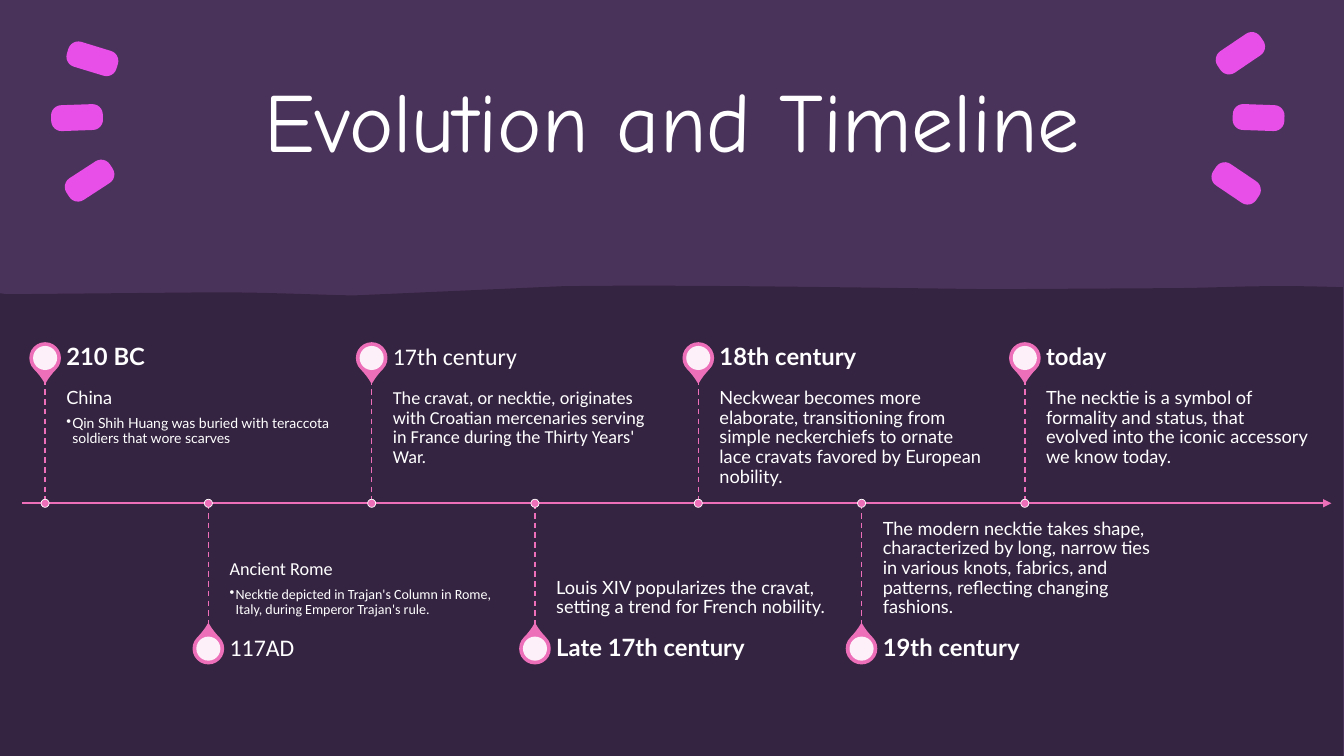
import lxml.etree
import pptx
import pptx.dml.color
import pptx.enum.dml
import pptx.enum.shapes
import pptx.enum.text
import pptx.oxml.ns
import pptx.util

Pt = pptx.util.Pt
qn = pptx.oxml.ns.qn
RGBColor = pptx.dml.color.RGBColor
SHAPE = pptx.enum.shapes.MSO_SHAPE
ANCHOR = pptx.enum.text.MSO_ANCHOR

PLUM = RGBColor(0x4A, 0x33, 0x5B)
NIGHT = RGBColor(0x35, 0x24, 0x41)
MAGENTA = RGBColor(0xE8, 0x4F, 0xE9)
PINK = RGBColor(0xED, 0x6F, 0xBA)
WHITE = RGBColor(0xFF, 0xFF, 0xFF)

SLIDE_W, SLIDE_H = 960, 540

# Dash centres within each burst's box, with their tilt in degrees
LEFT_DASHES = [(30, 19, 17), (19, 61, -2), (28, 106, -33)]
RIGHT_DASHES = [(20, 15, -34), (33, 61, 2), (17, 108, 34)]

# Wave edge from left to right: two numbers end a line, six end a curve
WAVE_START = (0, 209.5)
WAVE = [
    (5, 210.2), (153.4, 208.8),
    (194.4, 208.8, 234, 211, 254.2, 211), (401, 204.5),
    (479.5, 203, 639.4, 205.9, 710.6, 206.6), (830.2, 205.9),
    (871.2, 205.9, 897.8, 203, 959.3, 205.2),
]

# Date, date font, bold date, text, bullet
EVENTS = [
    ("210 BC", "Lato", True, "China",
     "Qin Shih Huang was buried with teraccota soldiers that wore scarves"),
    ("117AD", "Calibri", False, "Ancient Rome",
     "Necktie depicted in Trajan's Column in Rome, Italy, during Emperor Trajan's rule."),
    ("17th century", "Calibri", False,
     "The cravat, or necktie, originates with Croatian mercenaries serving in France "
     "during the Thirty Years' War.", None),
    ("Late 17th century", "Lato", True,
     "Louis XIV popularizes the cravat, setting a trend for French nobility.", None),
    ("18th century", "Lato", True,
     "Neckwear becomes more elaborate, transitioning from simple neckerchiefs to ornate "
     "lace cravats favored by European nobility.", None),
    ("19th century", "Lato", True,
     "The modern necktie takes shape, characterized by long, narrow ties in various knots, "
     "fabrics, and patterns, reflecting changing fashions.", None),
    ("today", "Lato", True,
     "The necktie is a symbol of formality and status, that evolved into the iconic "
     "accessory we know today.", None),
]
EVENT_STEP = 116.64
DATE_H, TEXT_H, TEXT_W = 31, 88.3, 194.4
PIN, HOLE, DOT = 21.6, 17.2, 5.8


def paint(shape, fill, outline=None, width=1):
    shape.shadow.inherit = False
    shape.fill.solid()
    shape.fill.fore_color.rgb = fill
    if outline is None:
        shape.line.fill.background()
    else:
        shape.line.color.rgb = outline
        shape.line.width = Pt(width)


def add_centred(slide, kind, x, y, width, height):
    return slide.shapes.add_shape(
        kind, Pt(x - width / 2), Pt(y - height / 2), Pt(width), Pt(height))


def add_line(slide, x1, y1, x2, y2, width):
    line = slide.shapes.add_connector(
        pptx.enum.shapes.MSO_CONNECTOR.STRAIGHT, Pt(x1), Pt(y1), Pt(x2), Pt(y2))
    line.line.color.rgb = PINK
    line.line.width = Pt(width)
    lxml.etree.SubElement(line._element.spPr, qn("a:effectLst"))
    return line


def format_paragraph(paragraph, text, font, size, bold=False):
    paragraph.text = text
    paragraph.line_spacing = 0.9
    paragraph.font.name = font
    paragraph.font.size = Pt(size)
    paragraph.font.bold = bold
    paragraph.font.color.rgb = WHITE


def add_text_frame(slide, left, top, height, anchor, insets):
    frame = slide.shapes.add_textbox(Pt(left), Pt(top), Pt(TEXT_W), Pt(height)).text_frame
    frame.word_wrap = True
    frame.vertical_anchor = anchor
    frame.margin_left = 0
    frame.margin_top, frame.margin_right, frame.margin_bottom = map(Pt, insets)
    return frame


def add_title(slide, left, top, width, height):
    title = slide.shapes.title
    title.left, title.top, title.width, title.height = map(Pt, (left, top, width, height))
    frame = title.text_frame
    frame.auto_size = pptx.enum.text.MSO_AUTO_SIZE.NONE
    frame.vertical_anchor = ANCHOR.TOP
    frame.margin_left = frame.margin_top = frame.margin_right = frame.margin_bottom = 0
    heading = frame.paragraphs[0]
    format_paragraph(heading, "Evolution and Timeline", "Comic Neue", 60)
    heading.line_spacing = 1.0
    heading.alignment = pptx.enum.text.PP_ALIGN.CENTER


def add_burst(slide, left, top, dashes):
    for x, y, tilt in dashes:
        dash = add_centred(slide, SHAPE.ROUNDED_RECTANGLE, left + x, top + y, 37, 18.5)
        dash.adjustments[0] = 0.4
        dash.rotation = tilt
        paint(dash, MAGENTA)


def add_wave(slide, right, bottom):
    edge = [WAVE_START]
    for piece in WAVE:
        if len(piece) == 2:
            edge.append(piece)
            continue
        corners = [edge[-1], piece[0:2], piece[2:4], piece[4:6]]
        for step in range(1, 13):
            t = step / 12
            weights = ((1 - t) ** 3, 3 * t * (1 - t) ** 2, 3 * t * t * (1 - t), t ** 3)
            edge.append(tuple(sum(w * c[axis] for w, c in zip(weights, corners))
                              for axis in (0, 1)))
    edge += [(right, bottom), (0, bottom)]
    builder = slide.shapes.build_freeform(Pt(edge[0][0]), Pt(edge[0][1]))
    builder.add_line_segments([(Pt(x), Pt(y)) for x, y in edge[1:]], close=True)
    paint(builder.convert_to_shape(), NIGHT)


def add_event(slide, x, axis_y, above, event):
    date, font, bold, text, bullet = event
    # The box runs up or down from the axis, with the date at its far end
    text_top = axis_y - TEXT_H if above else axis_y
    date_top = text_top - DATE_H if above else text_top + TEXT_H
    pin_y = date_top + DATE_H / 2

    # Pin
    pin = add_centred(slide, SHAPE.TEAR, x, pin_y, PIN, PIN)
    pin.adjustments[0] = 1.15
    pin.rotation = 135 if above else 315
    paint(pin, PINK, PINK)
    hole = add_centred(slide, SHAPE.OVAL, x, pin_y, HOLE, HOLE)
    paint(hole, WHITE)
    hole_color = hole._element.spPr.find(qn("a:solidFill")).find(qn("a:srgbClr"))
    lxml.etree.SubElement(hole_color, qn("a:alpha")).set("val", "90000")

    # Description
    anchor, insets = (ANCHOR.TOP, (6.5, 6.5, 10)) if above else (ANCHOR.BOTTOM, (10, 0, 6.5))
    description = add_text_frame(slide, x + 15.2, text_top, TEXT_H, anchor, insets)
    format_paragraph(description.paragraphs[0], text, font, 13)
    if bullet:
        description.paragraphs[0].space_after = Pt(5.5)
        detail = description.add_paragraph()
        detail.level = 1
        properties = detail._p.get_or_add_pPr()
        properties.set("marL", str(Pt(4.3)))
        properties.set("indent", str(-Pt(4.3)))
        lxml.etree.SubElement(properties, qn("a:buChar")).set("char", "•")
        format_paragraph(detail, bullet, font, 10)

    # Date
    heading = add_text_frame(slide, x + 15.2, date_top, DATE_H, ANCHOR.MIDDLE, (0, 8.6, 0))
    format_paragraph(heading.paragraphs[0], date, font, 17, bold)

    # Stem and dot on the axis
    stem_end = text_top if above else text_top + TEXT_H
    stem = add_line(slide, x, min(axis_y, stem_end), x, max(axis_y, stem_end), 1)
    stem.line.dash_style = pptx.enum.dml.MSO_LINE.DASH
    paint(add_centred(slide, SHAPE.OVAL, x, axis_y, DOT, DOT), PINK, WHITE, 0.5)


def add_timeline(slide, left, axis_y, right):
    axis = add_line(slide, left, axis_y, right, axis_y, 1.5)
    outline = axis.line._get_or_add_ln()
    lxml.etree.SubElement(outline, qn("a:tailEnd")).set("type", "triangle")
    for index, event in enumerate(EVENTS):
        add_event(slide, left + 16.2 + index * EVENT_STEP, axis_y, index % 2 == 0, event)


def main():
    deck = pptx.Presentation()
    deck.slide_width, deck.slide_height = Pt(SLIDE_W), Pt(SLIDE_H)
    slide = deck.slides.add_slide(deck.slide_layouts[5])
    slide.background.fill.solid()
    slide.background.fill.fore_color.rgb = NIGHT

    # Backdrop, kept behind the title
    backdrop = slide.shapes.add_shape(SHAPE.RECTANGLE, 0, 0, Pt(SLIDE_W), Pt(SLIDE_H))
    paint(backdrop, PLUM)
    slide.shapes.title._element.addprevious(backdrop._element)

    add_title(slide, 132.5, 49, 695.5, 54)
    add_burst(slide, 36, 23, LEFT_DASHES)
    add_burst(slide, 866, 23, RIGHT_DASHES)
    add_wave(slide, 959.3, SLIDE_H)
    add_timeline(slide, 16, 359.5, 951)
    deck.save("out.pptx")


if __name__ == "__main__":
    main()
